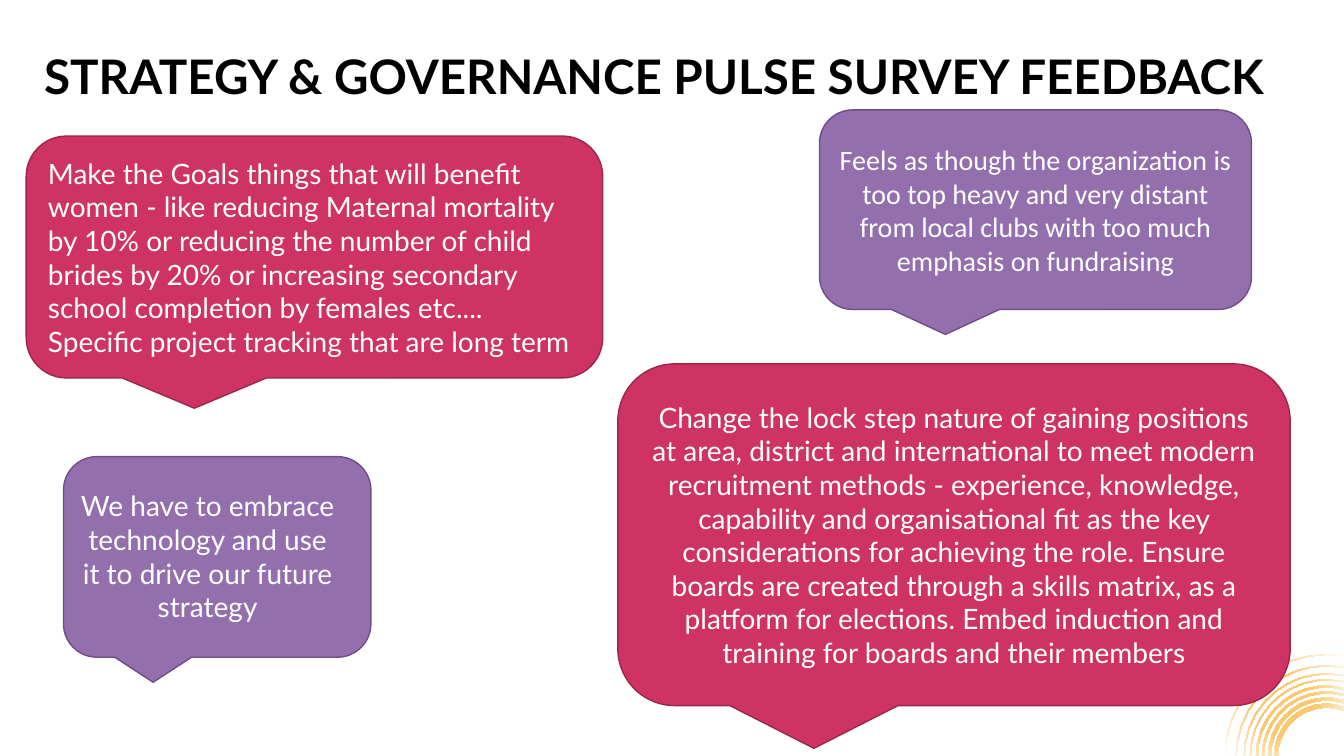
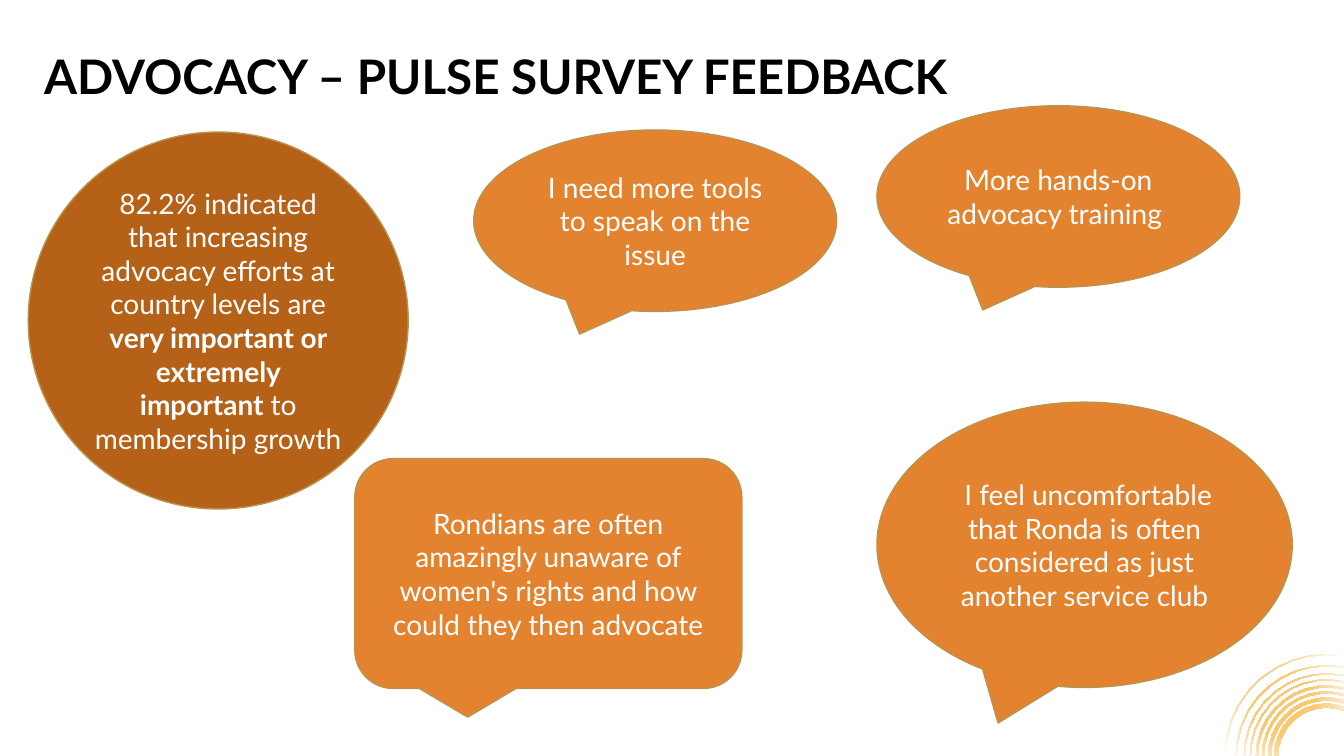
from dataclasses import dataclass
from math import acos, cos, pi, sin

from pptx import Presentation
from pptx.dml.color import RGBColor
from pptx.enum.shapes import MSO_SHAPE
from pptx.enum.text import MSO_ANCHOR, PP_ALIGN
from pptx.oxml import parse_xml
from pptx.oxml.ns import nsdecls
from pptx.shapes.autoshape import Shape
from pptx.slide import Slide
from pptx.text.text import TextFrame
from pptx.util import Pt

SCALE = 3048
WIDE, HIGH = 4000, 2250
FONT = "Lato"
HEX = {
    "black": "000000",
    "white": "FFFFFF",
    "pink": "CE3364",
    "wine": "9B254B",
    "lilac": "946FAD",
    "plum": "704D88",
    "orange": "E3822F",
    "rust": "B56118",
    "sand": "B79551",
    "gold": "F8C96D",
}
EDGE = {"pink": "wine", "lilac": "plum", "orange": "sand", "rust": "sand"}
ROUND = MSO_SHAPE.ROUNDED_RECTANGULAR_CALLOUT
SPEECH = MSO_SHAPE.OVAL_CALLOUT
DISC = MSO_SHAPE.OVAL

HUB = (3948, 2250)
RINGS = [(156, 144), (174, 165), (192, 186), (210, 204),
         (228, 225), (246, 243), (270, 267), (303, 301)]
STEPS = 10

Box = tuple[int, int, int, int]
Part = tuple[str, bool]


@dataclass(frozen=True)
class Bubble:
    kind: MSO_SHAPE
    box: Box
    fill: str
    words: str | list[Part]
    align: PP_ALIGN = PP_ALIGN.CENTER
    font: str = FONT
    inner: Box | None = None


@dataclass(frozen=True)
class Page:
    title: str
    bubbles: list[Bubble]


PAGES = [
    Page("STRATEGY & GOVERNANCE PULSE SURVEY FEEDBACK", [
        Bubble(ROUND, (1839, 1083, 2001, 1017), "pink",
               "Change the lock step nature of gaining positions at area, district and "
               "international to meet modern recruitment methods - experience, knowledge, "
               "capability and organisational fit as the key considerations for achieving "
               "the role. Ensure boards are created through a skills matrix, as a platform "
               "for elections. Embed induction and training for boards and their members"),
        Bubble(ROUND, (189, 1359, 915, 597), "lilac",
               "We have to embrace technology and use it to drive our future strategy",
               inner=(210, 1440, 816, 435)),
        Bubble(ROUND, (78, 405, 1716, 720), "pink",
               "Make the Goals things that will benefit women - like reducing Maternal "
               "mortality by 10% or reducing the number of child brides by 20% or "
               "increasing secondary school completion by females etc.... Specific "
               "project tracking that are long term",
               align=PP_ALIGN.LEFT),
        Bubble(ROUND, (2439, 327, 1286, 594), "lilac",
               "Feels as though the organization is too top heavy and very distant from "
               "local clubs with too much emphasis on fundraising",
               font="Calibri"),
    ]),
    Page("ADVOCACY – PULSE SURVEY FEEDBACK", [
        Bubble(SPEECH, (1410, 387, 1080, 540), "orange",
               "I need more tools to speak on the issue"),
        Bubble(SPEECH, (2610, 1197, 1236, 849), "orange",
               " I feel uncomfortable that Ronda is often considered as just another "
               "service club"),
        Bubble(ROUND, (1056, 1365, 1152, 684), "orange",
               "Rondians are often amazingly unaware of women's rights and how could "
               "they then advocate"),
        Bubble(SPEECH, (2610, 315, 1080, 540), "orange",
               "More hands-on advocacy training "),
        Bubble(DISC, (84, 393, 1131, 1122), "rust", [
            ("82.2% indicated that increasing advocacy efforts at country levels are ", False),
            ("very important or extremely important ", True),
            ("to membership growth", False),
        ]),
    ]),
]


def emu(px: float) -> int:
    return round(px * SCALE)


def place(box: Box) -> list[int]:
    return [emu(px) for px in box]


def tint(name: str) -> RGBColor:
    return RGBColor.from_string(HEX[name])


def write(frame: TextFrame, words: str | list[Part], *, size: int = 20,
          font: str = FONT, color: str = "white", bold: bool = False,
          align: PP_ALIGN = PP_ALIGN.CENTER, space: float = 1.0,
          anchor: MSO_ANCHOR = MSO_ANCHOR.MIDDLE) -> None:
    frame.word_wrap = True
    frame.vertical_anchor = anchor
    line = frame.paragraphs[0]
    line.alignment = align
    line.line_spacing = space
    parts = [(words, bold)] if isinstance(words, str) else words
    for part, heavy in parts:
        run = line.add_run()
        run.text = part
        run.font.name = font
        run.font.size = Pt(size)
        run.font.bold = heavy
        run.font.color.rgb = tint(color)


def glow(shape: Shape) -> None:
    stops = "".join(
        f'<a:gs pos="{pos * 1000}"><a:srgbClr val="{HEX[name]}"/></a:gs>'
        for pos, name in ((0, "gold"), (37, "gold"), (100, "white"))
    )
    shape.fill.background()
    blank = shape.fill._xPr.find(
        "{http://schemas.openxmlformats.org/drawingml/2006/main}noFill")
    blank.getparent().replace(blank, parse_xml(
        f'<a:gradFill {nsdecls("a")} rotWithShape="1"><a:gsLst>{stops}</a:gsLst>'
        '<a:path path="circle"><a:fillToRect l="50000" t="50000" r="50000" b="50000"/>'
        '</a:path></a:gradFill>'))


def arc(size: int) -> list[tuple[int, int]]:
    last = acos((WIDE - HUB[0]) / size)
    turns = [pi + (last - pi) * step / STEPS for step in range(STEPS + 1)]
    return [(emu(HUB[0] + size * cos(turn)), emu(HUB[1] - size * sin(turn)))
            for turn in turns]


def sunrise(slide: Slide) -> None:
    pen = None
    for outer, inner in RINGS:
        first, *rest = arc(outer) + arc(inner)[::-1]
        if pen is None:
            pen = slide.shapes.build_freeform(*first)
        else:
            pen.move_to(*first)
        pen.add_line_segments(rest, close=True)
    shape = pen.convert_to_shape()
    shape.shadow.inherit = False
    shape.line.fill.background()
    glow(shape)


def speak(slide: Slide, bubble: Bubble) -> None:
    shapes = slide.shapes.add_group_shape().shapes if bubble.inner else slide.shapes
    shape = shapes.add_shape(bubble.kind, *place(bubble.box))
    shape.shadow.inherit = False
    shape.fill.solid()
    shape.fill.fore_color.rgb = tint(bubble.fill)
    shape.line.color.rgb = tint(EDGE[bubble.fill])
    shape.line.width = Pt(1)
    anchor = MSO_ANCHOR.MIDDLE
    if bubble.inner:
        shape = shapes.add_textbox(*place(bubble.inner))
        anchor = MSO_ANCHOR.TOP
    write(shape.text_frame, bubble.words, font=bubble.font, align=bubble.align,
          anchor=anchor)


def draw(slide: Slide, page: Page) -> None:
    sunrise(slide)
    title = slide.shapes.add_textbox(*place((102, 120, 3798, 231)))
    write(title.text_frame, page.title, size=34, color="black", bold=True,
          align=PP_ALIGN.LEFT, space=0.9)
    for bubble in page.bubbles:
        speak(slide, bubble)


def main() -> None:
    deck = Presentation()
    deck.slide_width, deck.slide_height = emu(WIDE), emu(HIGH)
    for page in PAGES:
        draw(deck.slides.add_slide(deck.slide_layouts[6]), page)
    deck.save("out.pptx")


if __name__ == "__main__":
    main()
